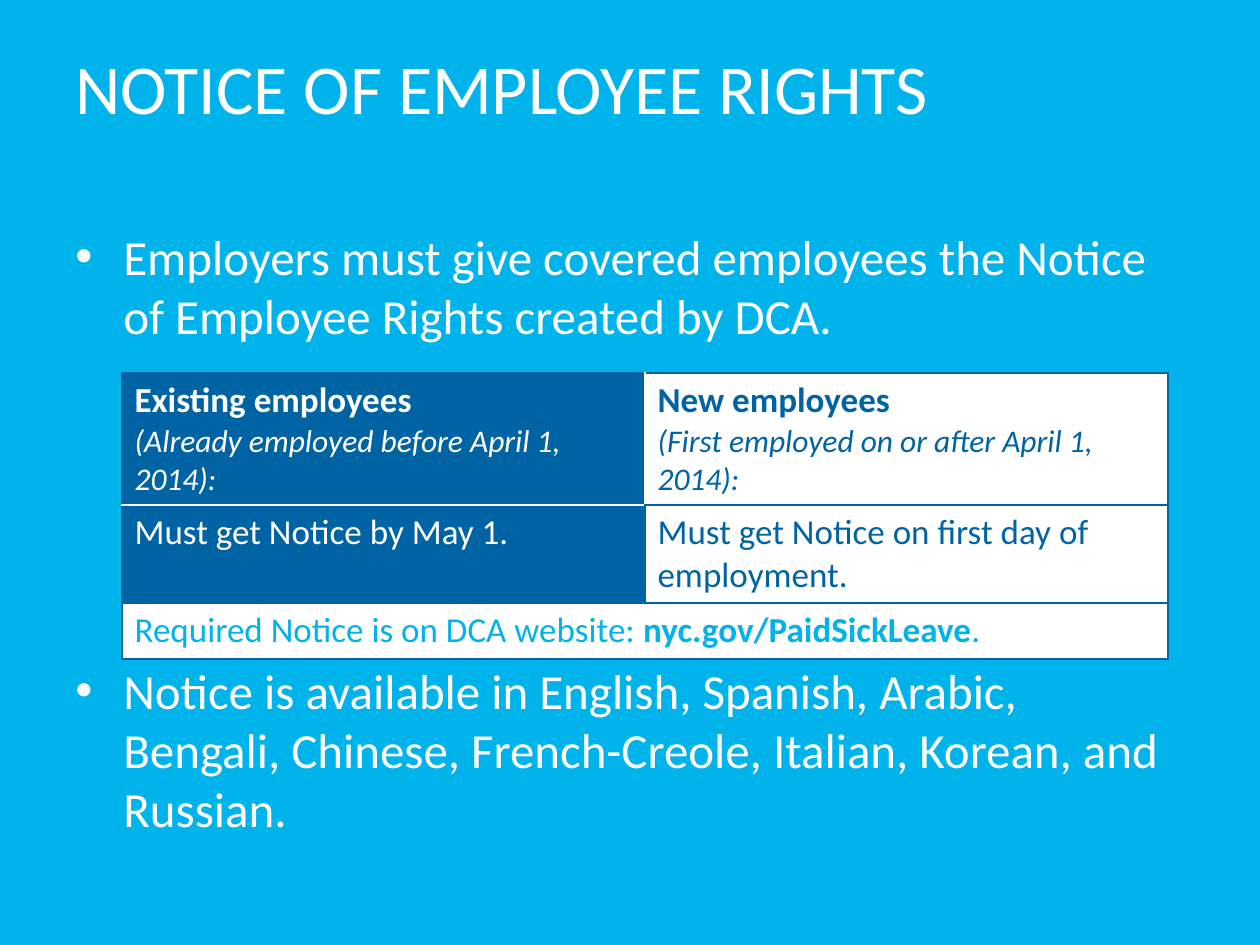
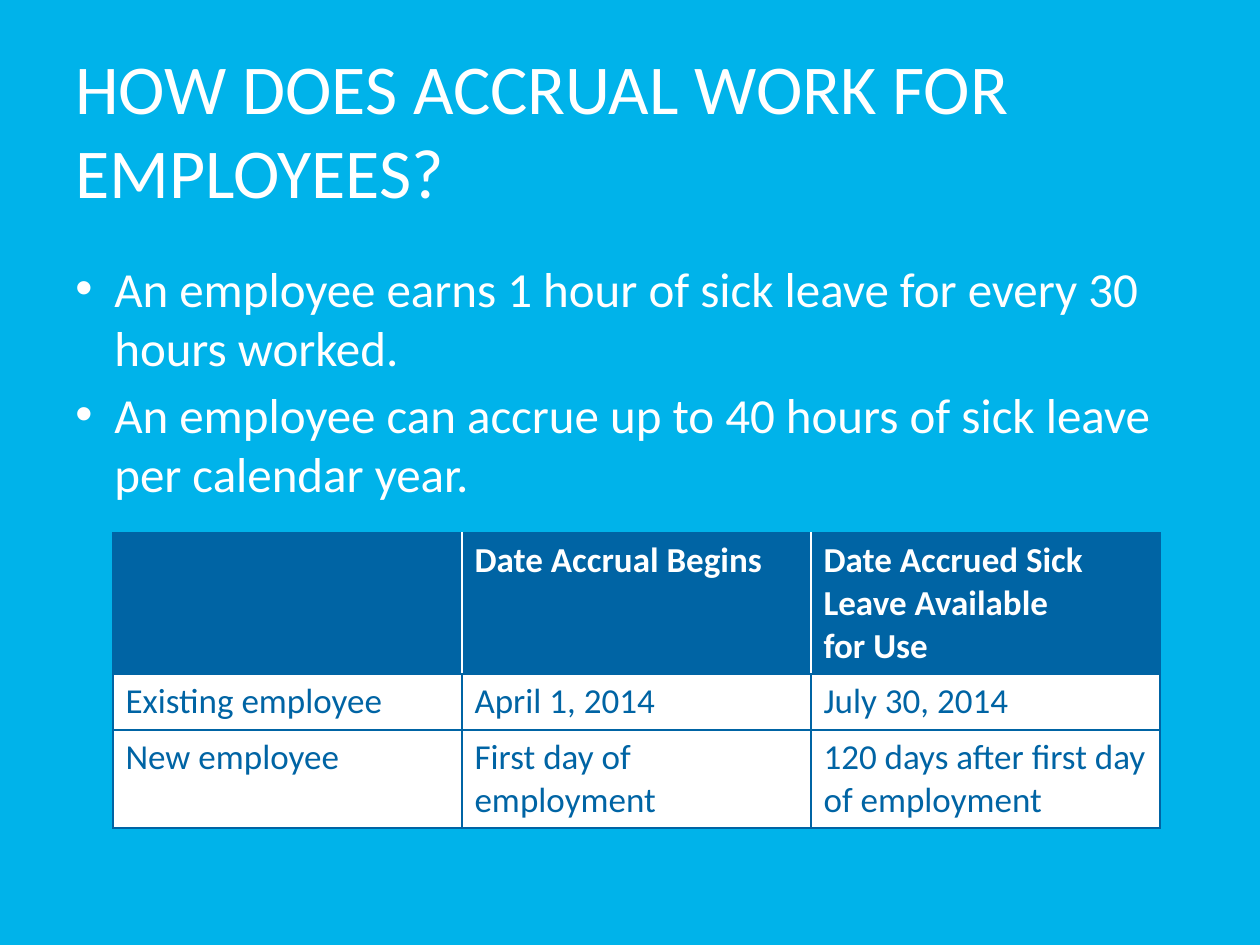
"""Build two paid sick leave slides: notice of rights and accrual of leave."""
from dataclasses import dataclass

from lxml import etree
from pptx import Presentation
from pptx import util as u
from pptx.dml import color
from pptx.oxml import ns


@dataclass(frozen=True)
class Theme:
    sky: str = "00B3EA"
    navy: str = "0064A4"
    white: str = "FFFFFF"
    face: str = "Calibri"
    title: int = 40
    body: int = 28
    cell: int = 20
    note: int = 18


theme = Theme()
PX = 914400 / 126
STYLES = {
    "title": {"size": theme.title},
    "body": {"size": theme.body},
    "plain": {"size": theme.cell},
    "strong": {"size": theme.cell, "bold": True},
    "note": {"size": theme.note, "italic": True},
}


def px(length):
    return u.Emu(round(length * PX))


def write(frame, paragraphs, ink):
    for index, pieces in enumerate(paragraphs):
        paragraph = frame.add_paragraph() if index else frame.paragraphs[0]
        for words, style in pieces:
            run = paragraph.add_run()
            run.text = words
            run.font.name = theme.face
            run.font.color.rgb = color.RGBColor.from_string(ink)
            for key, value in STYLES[style].items():
                setattr(run.font, key, u.Pt(value) if key == "size" else value)


dark = (theme.white, theme.navy)
light = (theme.navy, theme.white)
bright = (theme.sky, theme.white)

slides = [
    {
        "title": "NOTICE OF EMPLOYEE RIGHTS",
        "body_top": 220, "indent": 48, "gap": 181,
        "bullets": [
            "Employers must give covered employees the Notice of Employee Rights created by DCA.",
            "Notice is available in English, Spanish, Arabic, Bengali, Chinese, "
            "French-Creole, Italian, Korean, and Russian.",
        ],
        "table_at": (122, 373), "column": 523, "rows": (132, 98, 56),
        "merged": [((2, 0), (2, 1))],
        "cells": [
            [(dark, "RB", [[("Existing employees", "strong")],
                           [("(Already employed before April 1, 2014):", "note")]]),
             (light, "L", [[("New employees", "strong")],
                           [("(First employed on or after April 1, 2014):", "note")]])],
            [(dark, "T", [[("Must get Notice by May 1.", "plain")]]),
             (light, "", [[("Must get Notice on first day of employment.", "plain")]])],
            [(bright, "", [[("Required Notice is on DCA website: ", "plain"),
                            ("nyc.gov/PaidSickLeave", "strong"), (".", "plain")]]),
             (bright, "", [])],
        ],
    },
    {
        "title": "HOW DOES ACCRUAL WORK FOR EMPLOYEES?",
        "body_top": 252, "indent": 39, "gap": 5,
        "bullets": [
            "An employee earns 1 hour of sick leave for every 30 hours worked.",
            "An employee can accrue up to 40 hours of sick leave per calendar year.",
        ],
        "table_at": (113, 533), "column": 349, "rows": (141, 56, 98),
        "merged": [],
        "cells": [
            [(dark, "R", []),
             (dark, "LR", [[("Date Accrual Begins", "strong")]]),
             (dark, "L", [[("Date Accrued Sick Leave Available", "strong")],
                          [("for Use", "strong")]])],
            *[[(light, "", [[(words, "plain")]]) for words in row] for row in (
                ("Existing employee", "April 1, 2014", "July 30, 2014"),
                ("New employee", "First day of employment",
                 "120 days after first day of employment"),
            )],
        ],
    },
]

deck = Presentation()
deck.slide_width, deck.slide_height = px(1260), px(945)

for content in slides:
    slide = deck.slides.add_slide(deck.slide_layouts[6])
    slide.background.fill.solid()
    slide.background.fill.fore_color.rgb = color.RGBColor.from_string(theme.sky)

    heading = slide.shapes.add_textbox(px(63), px(38), px(1134), px(158)).text_frame
    heading.word_wrap = True
    write(heading, [[(content["title"], "title")]], theme.white)

    body = slide.shapes.add_textbox(
        px(63), px(content["body_top"]), px(1134), px(624)).text_frame
    body.word_wrap = True
    write(body, [[(bullet, "body")] for bullet in content["bullets"]], theme.white)
    for index, paragraph in enumerate(body.paragraphs):
        properties = paragraph._p.get_or_add_pPr()
        properties.set("marL", str(px(content["indent"])))
        properties.set("indent", str(-px(content["indent"])))
        etree.SubElement(properties, ns.qn("a:buFont"), typeface="Arial")
        etree.SubElement(properties, ns.qn("a:buChar"), char="•")
        if index:
            paragraph.space_before = u.Pt(content["gap"])

    left, top = content["table_at"]
    heights, cells = content["rows"], content["cells"]
    count = len(cells[0])
    table = slide.shapes.add_table(
        len(heights), count, px(left), px(top),
        px(content["column"] * count), px(sum(heights))).table
    table.first_row = table.horz_banding = False
    for column in table.columns:
        column.width = px(content["column"])
    for row, height in zip(table.rows, heights):
        row.height = px(height)
    for start, end in content["merged"]:
        table.cell(*start).merge(table.cell(*end))

    for r, row in enumerate(cells):
        for c, ((ink, paper), white_edges, paragraphs) in enumerate(row):
            cell = table.cell(r, c)
            properties = cell._tc.get_or_add_tcPr()
            for side in "LRTB":
                edge = etree.SubElement(properties, ns.qn(f"a:ln{side}"), w=str(u.Pt(1)))
                paint = etree.SubElement(edge, ns.qn("a:solidFill"))
                etree.SubElement(paint, ns.qn("a:srgbClr"),
                                 val=theme.white if side in white_edges else theme.navy)
            cell.fill.solid()
            cell.fill.fore_color.rgb = color.RGBColor.from_string(paper)
            write(cell.text_frame, paragraphs, ink)

deck.save("out.pptx")
